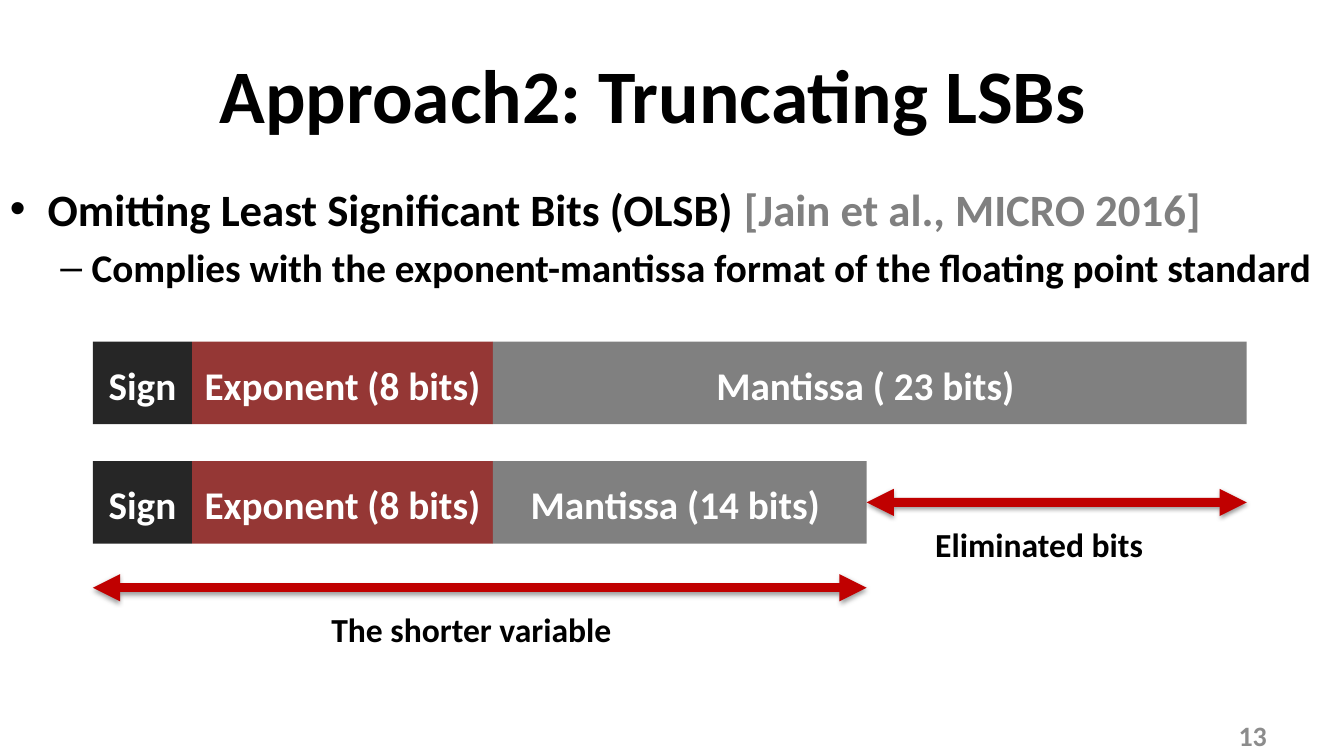
from itertools import accumulate

from lxml.etree import SubElement
from pptx import Presentation
from pptx.dml.color import RGBColor
from pptx.enum.shapes import MSO_CONNECTOR as Connector, MSO_SHAPE as Shape
from pptx.enum.text import MSO_ANCHOR as Anchor, PP_ALIGN as Align
from pptx.oxml.ns import qn
from pptx.util import Cm, Pt

BLACK = RGBColor(0x00, 0x00, 0x00)
WHITE = RGBColor(0xFF, 0xFF, 0xFF)
CHARCOAL = RGBColor(0x26, 0x26, 0x26)
BRICK = RGBColor(0x95, 0x37, 0x35)
GRAY = RGBColor(0x80, 0x80, 0x80)
PALE_GRAY = RGBColor(0x8C, 0x8C, 0x8C)
RED = RGBColor(0xC0, 0x00, 0x00)

BAR_LEFT = 2.34
BAR_HEIGHT = 2.08
FULL_TOP, SHORT_TOP = 8.61, 11.62
SIGN = ("Sign", 2.5, CHARCOAL)
EXPONENT = ("Exponent (8 bits)", 7.58, BRICK)
FULL_MANTISSA = ("Mantissa ( 23 bits) ", 19, GRAY)
SHORT_MANTISSA = ("Mantissa (14 bits) ", 9.42, GRAY)


def write(paragraph, text, size=28, color=BLACK, align=None, before=None,
          after=None, spacing=None):
    """Append a bold run to the paragraph and set the given paragraph format."""
    run = paragraph.add_run()
    run.text = text
    run.font.name = "Calibri"
    run.font.size = Pt(size)
    run.font.bold = True
    run.font.color.rgb = color
    if align is not None:
        paragraph.alignment = align
    if before is not None:
        paragraph.space_before = Pt(before)
    if after is not None:
        paragraph.space_after = Pt(after)
    if spacing is not None:
        paragraph.line_spacing = spacing


def set_bullet(paragraph, symbol, indent, hanging):
    properties = paragraph._p.get_or_add_pPr()
    properties.set("marL", str(Cm(indent)))
    properties.set("indent", str(-Cm(hanging)))
    SubElement(properties, qn("a:buFont"), typeface="Arial")
    SubElement(properties, qn("a:buChar"), char=symbol)


class BitLayoutSlide:
    """Holds the slide and the shared look of its elements."""

    def __init__(self, deck):
        self.slide = deck.slides.add_slide(deck.slide_layouts[6])
        self.shapes = self.slide.shapes

    def text(self, left, top, width, height, text="", anchor=Anchor.TOP, **style):
        box = self.shapes.add_textbox(Cm(left), Cm(top), Cm(width), Cm(height))
        frame = box.text_frame
        frame.word_wrap = True
        frame.vertical_anchor = anchor
        if text:
            write(frame.paragraphs[0], text, **style)
        return frame

    def field(self, left, top, label, width, fill):
        """Draw one coloured part of a number's bit layout."""
        box = self.shapes.add_shape(
            Shape.RECTANGLE, Cm(left), Cm(top), Cm(width), Cm(BAR_HEIGHT))
        box.shadow.inherit = False
        box.fill.solid()
        box.fill.fore_color.rgb = fill
        box.line.fill.background()
        box.text_frame.word_wrap = True
        box.text_frame.vertical_anchor = Anchor.MIDDLE
        write(box.text_frame.paragraphs[0], label, color=WHITE,
              align=Align.CENTER, after=8, spacing=1.07)
        return box

    def number(self, top, fields):
        """Draw the fields side by side and return the last one."""
        lefts = accumulate((width for _, width, _ in fields), initial=BAR_LEFT)
        return [self.field(left, top, *field)
                for left, field in zip(lefts, fields)][-1]

    def span_arrow(self, left, right, y):
        """Draw a horizontal double-headed arrow with a soft shadow."""
        arrow = self.shapes.add_connector(
            Connector.STRAIGHT, Cm(left), Cm(y), Cm(right), Cm(y))
        arrow.line.color.rgb = RED
        arrow.line.width = Pt(6.5)
        line = arrow.line._get_or_add_ln()
        for end in ("a:headEnd", "a:tailEnd"):
            SubElement(line, qn(end), type="triangle")
        effects = SubElement(arrow._element.spPr, qn("a:effectLst"))
        shadow = SubElement(effects, qn("a:outerShdw"), blurRad=str(Pt(3.1)),
                            dist=str(Pt(1.6)), dir="5400000", rotWithShape="0")
        shade = SubElement(shadow, qn("a:srgbClr"), val=str(BLACK))
        SubElement(shade, qn("a:alpha"), val="38000")
        return arrow


def main():
    deck = Presentation()
    deck.slide_width, deck.slide_height = Cm(33.87), Cm(19.05)
    page = BitLayoutSlide(deck)

    title = page.text(1.69, 0.76, 30.48, 3.18, "Approach2: Truncating LSBs",
                      anchor=Anchor.MIDDLE, size=54, align=Align.CENTER)
    title.margin_right = Cm(1.2)

    body = page.text(0, 4.45, 33.87, 7.39)
    method = body.paragraphs[0]
    write(method, "Omitting Least Significant Bits (OLSB) ", size=32, before=6.4)
    write(method, "[Jain et al., MICRO 2016]", size=32, color=GRAY)
    set_bullet(method, "•", 0.95, 0.95)
    benefit = body.add_paragraph()
    benefit.level = 1
    write(benefit, "Complies with the exponent-mantissa format of the "
          "floating point standard", before=5.6)
    set_bullet(benefit, "–", 2.06, 0.79)

    full_mantissa = page.number(FULL_TOP, [SIGN, EXPONENT, FULL_MANTISSA])
    short_mantissa = page.number(SHORT_TOP, [SIGN, EXPONENT, SHORT_MANTISSA])
    full_right = (full_mantissa.left + full_mantissa.width) / Cm(1)
    short_right = (short_mantissa.left + short_mantissa.width) / Cm(1)

    eliminated = page.span_arrow(short_right, full_right,
                                 SHORT_TOP + BAR_HEIGHT / 2)
    eliminated.begin_connect(short_mantissa, 3)
    page.text(23.32, 13.08, 6.65, 1.27, "Eliminated bits", size=24)
    page.span_arrow(BAR_LEFT, short_right, 14.81)
    page.text(8.1, 15.21, 9.32, 1.27, "The shorter variable", size=24)

    page.text(24.28, 18.03, 7.9, 1.02, "13", anchor=Anchor.MIDDLE, size=20,
              color=PALE_GRAY, align=Align.RIGHT)
    deck.save("out.pptx")


if __name__ == "__main__":
    main()
